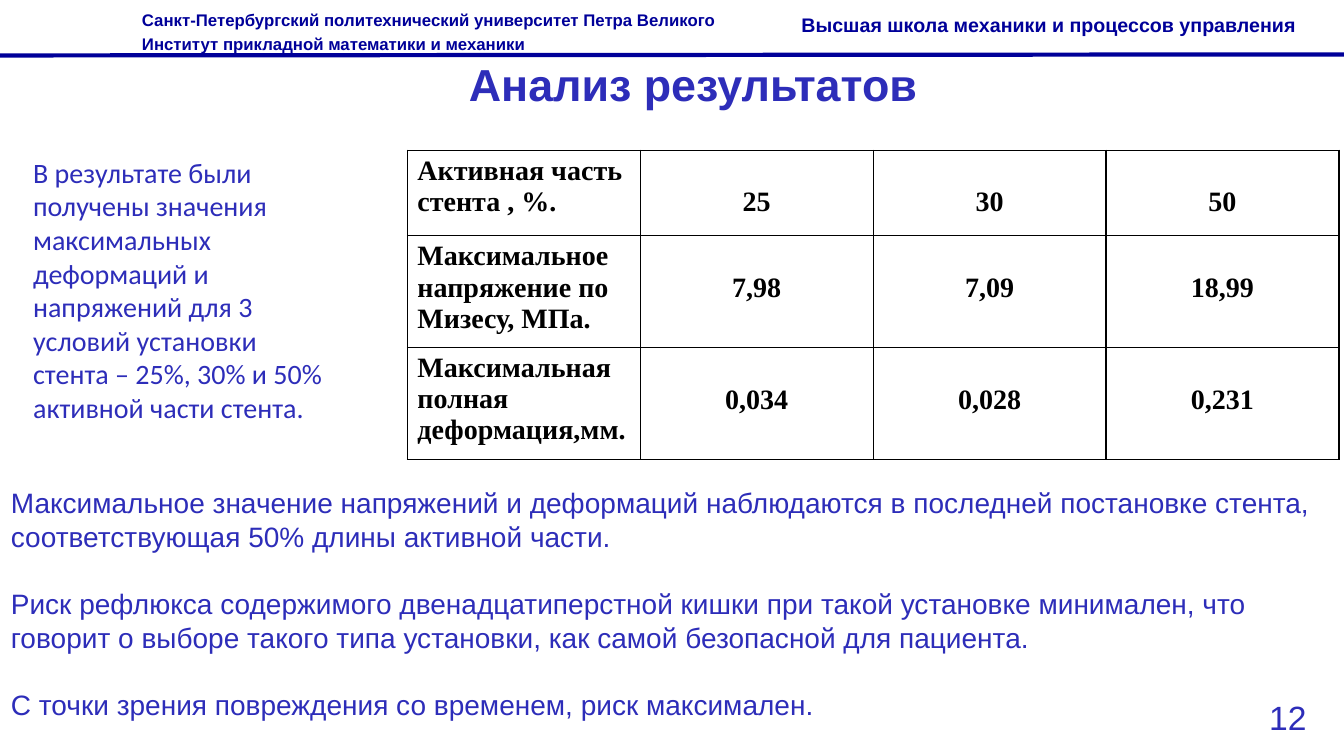
from dataclasses import dataclass

from lxml import etree
from pptx import Presentation
from pptx.dml.color import RGBColor
from pptx.enum.shapes import MSO_CONNECTOR
from pptx.enum.text import MSO_ANCHOR, MSO_AUTO_SIZE, PP_ALIGN
from pptx.oxml.ns import qn
from pptx.slide import Slide
from pptx.table import _Cell
from pptx.text.text import TextFrame, _Paragraph
from pptx.util import Inches, Pt

STRAIGHT = MSO_CONNECTOR.STRAIGHT
TOP = MSO_ANCHOR.TOP
NO_AUTOSIZE = MSO_AUTO_SIZE.NONE
LEFT, CENTER = PP_ALIGN.LEFT, PP_ALIGN.CENTER

NAVY = RGBColor(0x00, 0x00, 0x99)
BLUE = RGBColor(0x2D, 0x2D, 0xB9)
BLACK = RGBColor(0x00, 0x00, 0x00)


@dataclass(frozen=True)
class Style:
    size: float
    color: RGBColor
    font: str = "Arial"
    bold: bool = False
    line_spacing: float | Pt = 1.0
    align: PP_ALIGN = LEFT


@dataclass(frozen=True)
class TextBlock:
    left: float
    top: float
    width: float
    height: float
    paragraphs: tuple[str, ...]
    style: Style
    gap: float = 0


TITLE_STYLE = Style(32, BLUE, bold=True, align=CENTER)
LABEL_STYLE = Style(20, BLACK, "Times New Roman", True)
VALUE_STYLE = Style(20, BLACK, "Times New Roman", True, align=CENTER)

TEXT_BLOCKS = (
    TextBlock(1.31, 0.01, 6.17, 0.56,
              ("Санкт-Петербургский политехнический университет Петра Великого",
               "Институт прикладной математики и механики"),
              Style(12, NAVY, bold=True, line_spacing=1.2)),
    TextBlock(7.85, 0.03, 6.14, 0.38,
              ("Высшая школа механики и процессов управления",),
              Style(14, NAVY, bold=True, line_spacing=1.2)),
    TextBlock(0.23, 1.49, 3.22, 2.79,
              ("В результате были получены значения максимальных деформаций и напряжений "
               "для 3 условий установки стента – 25%, 30% и 50% активной части стента.",),
              Style(20, BLUE, "Calibri", line_spacing=Pt(24))),
    TextBlock(0.01, 4.77, 13.33, 2.46,
              ("Максимальное значение напряжений и деформаций наблюдаются в последней "
               "постановке стента, соответствующая 50% длины активной части.",
               "Риск рефлюкса содержимого двенадцатиперстной кишки при такой установке "
               "минимален, что говорит о выборе такого типа установки, как самой безопасной "
               "для пациента.",
               "C точки зрения повреждения со временем, риск максимален."),
              Style(20, BLUE, line_spacing=Pt(24)), gap=24),
    TextBlock(12.49, 6.86, 0.8, 0.5, ("12",), Style(24, BLUE)),
)

RESULTS = (
    ("Активная часть стента , %.", "25", "30", "50"),
    ("Максимальное напряжение по Мизесу, МПа.", "7,98", "7,09", "18,99"),
    ("Максимальная полная деформация,мм.", "0,034", "0,028", "0,231"),
)
ROW_HEIGHTS = (0.85, 1.11, 1.11)
COLUMN_WIDTH = 2.31
VALUE_TOP_MARGIN = 0.36


def write(paragraph: _Paragraph, text: str, style: Style) -> None:
    paragraph.alignment = style.align
    paragraph.line_spacing = style.line_spacing
    run = paragraph.add_run()
    run.text = text
    run.font.name = style.font
    run.font.size = Pt(style.size)
    run.font.bold = style.bold
    run.font.color.rgb = style.color


def fill_frame(frame: TextFrame, texts: tuple[str, ...], style: Style, gap: float = 0) -> None:
    frame.word_wrap = True
    for index, text in enumerate(texts):
        paragraph = frame.add_paragraph() if index else frame.paragraphs[0]
        write(paragraph, text, style)
        if index:
            paragraph.space_before = Pt(gap)


def add_text_block(slide: Slide, block: TextBlock) -> None:
    box = slide.shapes.add_textbox(Inches(block.left), Inches(block.top),
                                   Inches(block.width), Inches(block.height))
    fill_frame(box.text_frame, block.paragraphs, block.style, block.gap)


def add_header_rule(slide: Slide) -> None:
    rule = slide.shapes.add_connector(STRAIGHT, Inches(-0.03), Inches(0.55),
                                      Inches(13.33), Inches(0.54))
    rule.line.color.rgb = NAVY
    rule.line.width = Pt(3)
    etree.SubElement(rule.element.spPr, qn("a:effectLst"))


def place_title(slide: Slide) -> None:
    title = slide.shapes.title
    title.left, title.top = Inches(0.21), Inches(0.51)
    title.width, title.height = Inches(13.33), Inches(0.49)
    title.text_frame.auto_size = NO_AUTOSIZE
    title.text_frame.vertical_anchor = TOP
    fill_frame(title.text_frame, ("Анализ результатов",), TITLE_STYLE)


def outline_cell(cell: _Cell) -> None:
    properties = cell._tc.get_or_add_tcPr()
    for position, side in enumerate(("a:lnL", "a:lnR", "a:lnT", "a:lnB")):
        border = etree.Element(qn(side), w=str(Pt(1)))
        solid = etree.SubElement(border, qn("a:solidFill"))
        etree.SubElement(solid, qn("a:srgbClr"), val=str(BLACK))
        properties.insert(position, border)


def add_results_table(slide: Slide) -> None:
    column_count = len(RESULTS[0])
    table = slide.shapes.add_table(len(RESULTS), column_count, Inches(4.04), Inches(1.49),
                                   Inches(COLUMN_WIDTH * column_count),
                                   Inches(sum(ROW_HEIGHTS))).table
    table.first_row = False
    table.horz_banding = False
    for column in table.columns:
        column.width = Inches(COLUMN_WIDTH)
    for row_index, (height, texts) in enumerate(zip(ROW_HEIGHTS, RESULTS)):
        table.rows[row_index].height = Inches(height)
        for column_index, text in enumerate(texts):
            cell = table.cell(row_index, column_index)
            cell.fill.background()
            outline_cell(cell)
            if column_index:
                cell.margin_top = Inches(VALUE_TOP_MARGIN)
            write(cell.text_frame.paragraphs[0], text,
                  VALUE_STYLE if column_index else LABEL_STYLE)


def main() -> None:
    presentation = Presentation()
    presentation.slide_width = Inches(13.33)
    presentation.slide_height = Inches(7.5)
    slide = presentation.slides.add_slide(presentation.slide_layouts.get_by_name("Title Only"))
    add_header_rule(slide)
    place_title(slide)
    for block in TEXT_BLOCKS:
        add_text_block(slide, block)
    add_results_table(slide)
    presentation.save("out.pptx")


if __name__ == "__main__":
    main()
